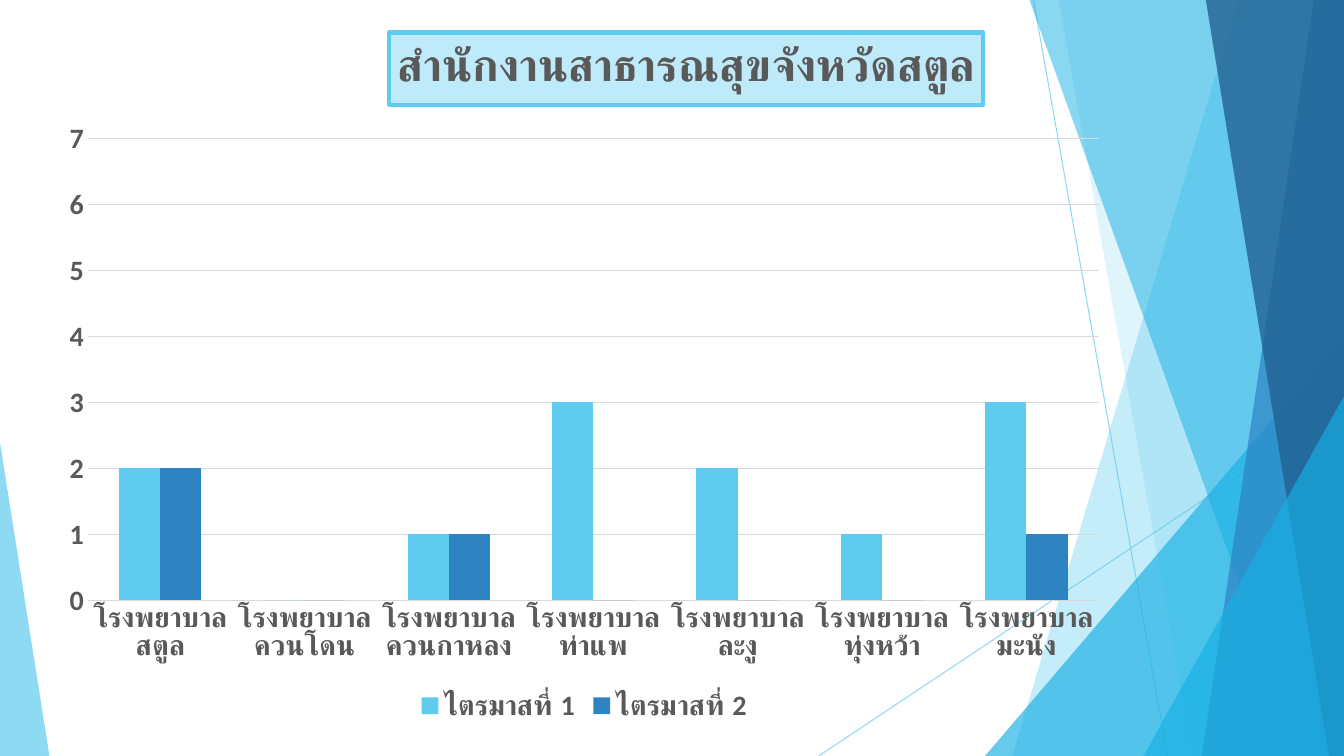
from dataclasses import dataclass

from lxml.etree import SubElement
from pptx import Presentation
from pptx.chart.data import CategoryChartData
from pptx.dml.color import RGBColor
from pptx.enum.chart import XL_CHART_TYPE, XL_LEGEND_POSITION, XL_TICK_MARK
from pptx.enum.shapes import MSO_CONNECTOR, MSO_SHAPE
from pptx.oxml import parse_xml
from pptx.oxml.ns import nsdecls, qn
from pptx.util import Inches, Pt

WIDTH, HEIGHT = 13.33, 7.5


@dataclass(frozen=True)
class Theme:
    sky: str = "5FCBEF"
    cyan: str = "17B0E4"
    blue: str = "2E83C3"
    navy: str = "226292"
    pale: str = "BFEAF9"
    text: str = "595959"
    grid: str = "D9D9D9"
    font: str = "Calibri"
    title: int = 32
    label: int = 20


def rgb(code):
    return RGBColor.from_string(code)


def fade(shape, alpha):
    """Make every colour of the shape alpha percent opaque."""
    for color in shape._element.spPr.iter(qn("a:srgbClr")):
        SubElement(color, qn("a:alpha")).set("val", str(alpha * 1000))


def place(node, **sizes):
    """Give a chart part a fixed layout, in fractions of the chart."""
    for old in node.findall(qn("c:layout")):
        node.remove(old)
    target = '<c:layoutTarget val="inner"/>' if "w" in sizes else ""
    modes = "".join(f'<c:{key}Mode val="edge"/>' for key in "xy")
    values = "".join(f'<c:{key} val="{val}"/>' for key, val in sizes.items())
    layout = parse_xml(
        f"<c:layout {nsdecls('c')}><c:manualLayout>{target}{modes}{values}"
        "</c:manualLayout></c:layout>")
    node.insert(0 if node.find(qn("c:tx")) is None else 1, layout)


class Painter:
    def __init__(self, slide, theme):
        self.shapes = slide.shapes
        self.theme = theme

    def line(self, start, end, color, alpha):
        points = [Inches(value) for value in (*start, *end)]
        line = self.shapes.add_connector(MSO_CONNECTOR.STRAIGHT, *points)
        line.line.color.rgb = rgb(color)
        line.line.width = Pt(0.75)
        SubElement(line._element.spPr, qn("a:effectLst"))
        fade(line, alpha)

    def paint(self, shape, color, alpha):
        shape.shadow.inherit = False
        shape.fill.solid()
        shape.fill.fore_color.rgb = rgb(color)
        shape.line.fill.background()
        fade(shape, alpha)

    def band(self, top, bottom, color, alpha):
        """Fill from a slanted edge to the right side of the slide."""
        corners = [(top, 0), (WIDTH, 0), (WIDTH, HEIGHT), (bottom, HEIGHT)]
        start, *rest = [(Inches(x), Inches(y)) for x, y in corners]
        path = self.shapes.build_freeform(*start)
        path.add_line_segments(rest)
        self.paint(path.convert_to_shape(), color, alpha)

    def wedge(self, left, top, width, tip, color, alpha):
        """Draw a triangle that stands on the bottom of the slide."""
        box = [Inches(v) for v in (left, top, width, HEIGHT - top)]
        shape = self.shapes.add_shape(MSO_SHAPE.ISOSCELES_TRIANGLE, *box)
        shape.adjustments[0] = tip
        self.paint(shape, color, alpha)

    def style(self, font, size):
        font.name = self.theme.font
        font.size = Pt(size)
        font.bold = True
        font.color.rgb = rgb(self.theme.text)

    def chart(self, box, title, names, series):
        data = CategoryChartData()
        data.categories = names
        for name, values, _ in series:
            data.add_series(name, values)
        chart = self.shapes.add_chart(
            XL_CHART_TYPE.COLUMN_CLUSTERED, *map(Inches, box), data).chart
        self.style(chart.font, self.theme.label)
        plot = chart.plots[0]
        plot.gap_width, plot.overlap = 150, 0
        plot.vary_by_categories = False
        for bars, (_, _, color) in zip(plot.series, series):
            bars.format.fill.solid()
            bars.format.fill.fore_color.rgb = rgb(color)
        self.axes(chart)
        chart.has_legend = True
        chart.legend.position = XL_LEGEND_POSITION.BOTTOM
        chart.legend.include_in_layout = False
        self.style(chart.legend.font, self.theme.label)
        self.title(chart, title)
        place(chart._chartSpace.chart.plotArea,
              x=0.037, y=0.172, w=0.943, h=0.648)

    def axes(self, chart):
        for axis in (chart.category_axis, chart.value_axis):
            axis.major_tick_mark = axis.minor_tick_mark = XL_TICK_MARK.NONE
            axis.format.line.fill.background()
            self.style(axis.tick_labels.font, self.theme.label)
        scale = chart.value_axis
        scale.minimum_scale, scale.maximum_scale = 0, 7
        scale.major_unit = 1
        grid = scale.major_gridlines.format.line
        grid.color.rgb = rgb(self.theme.grid)
        grid.width = Pt(0.75)

    def title(self, chart, text):
        chart.has_title = True
        title = chart.chart_title
        title.text_frame.text = text
        for run in title.text_frame.paragraphs[0].runs:
            self.style(run.font, self.theme.title)
        title.format.fill.solid()
        title.format.fill.fore_color.rgb = rgb(self.theme.pale)
        title.format.line.color.rgb = rgb(self.theme.sky)
        title.format.line.width = Pt(3)
        place(title._element, x=0.318, y=0.023)


def main():
    deck = Presentation()
    deck.slide_width, deck.slide_height = Inches(WIDTH), Inches(HEIGHT)
    slide = deck.slides.add_slide(deck.slide_layouts[6])
    theme = Theme()
    pen = Painter(slide, theme)

    pen.line((10.25, 0), (11.58, HEIGHT), theme.sky, 70)
    pen.line((WIDTH, 4.03), (8.12, HEIGHT), theme.sky, 70)
    pen.band(12.28, 10.04, theme.sky, 36)
    pen.band(10.5, 11.83, theme.sky, 20)
    pen.wedge(9.77, 3.33, 3.56, 1, theme.cyan, 66)
    pen.band(10.21, 12.91, theme.cyan, 50)
    pen.band(13.03, 11.92, theme.blue, 70)
    pen.band(11.96, 13.18, theme.navy, 80)
    pen.wedge(11.34, 3.93, 1.99, 1, theme.cyan, 66)
    pen.wedge(0, 4.39, 0.49, 0, theme.sky, 70)

    towns = ["สตูล", "ควนโดน", "ควนกาหลง", "ท่าแพ", "ละงู", "ทุ่งหว้า", "มะนัง"]
    pen.chart(
        (0.48, 0.16, 10.63, 7.07),
        "สำนักงานสาธารณสุขจังหวัดสตูล",
        ["โรงพยาบาล" + town for town in towns],
        [("ไตรมาสที่ 1", (2, 0, 1, 3, 2, 1, 3), theme.sky),
         ("ไตรมาสที่ 2", (2, 0, 1, 0, 0, 0, 1), theme.blue)])
    deck.save("out.pptx")


if __name__ == "__main__":
    main()
